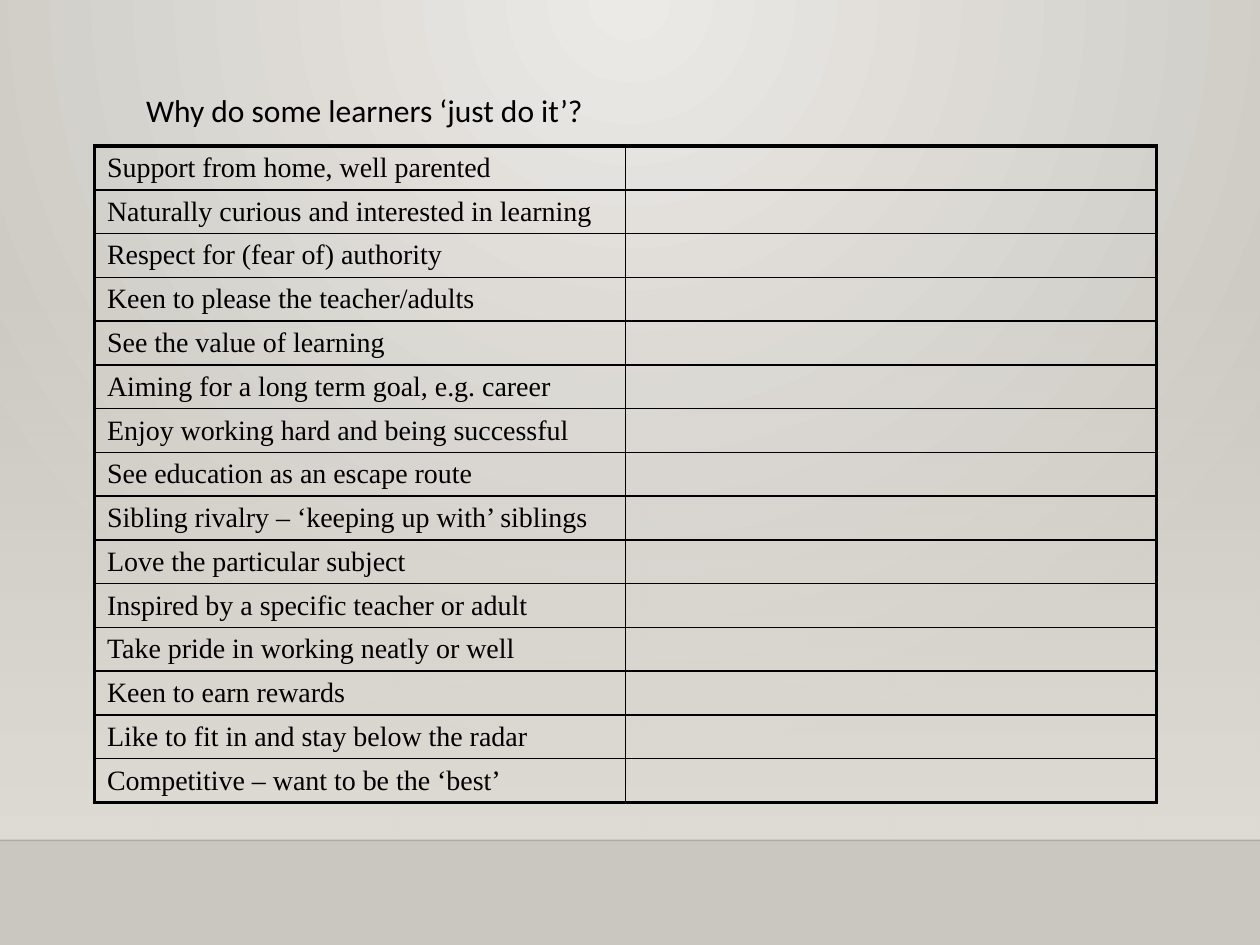
"""Builds a slide with a two-column table of reasons why learners 'just do it'."""
import pptx
import pptx.dml.color
import pptx.enum.shapes
import pptx.enum.text
import pptx.oxml.ns
import pptx.util
from lxml import etree

RGB = pptx.dml.color.RGBColor
BLACK = RGB(0x00, 0x00, 0x00)
INK = RGB(0x00, 0x00, 0x01)
PALE = RGB(0xEC, 0xEA, 0xE7)
GREY = RGB(0xCA, 0xC7, 0xC1)
SAND = RGB(0xDF, 0xDB, 0xD5)
THICK, THIN = 2.25, 1
REASONS = [
    "Support from home, well parented",
    "Naturally curious and interested in learning",
    "Respect for (fear of) authority",
    "Keen to please the teacher/adults",
    "See the value of learning",
    "Aiming for a long term goal, e.g. career",
    "Enjoy working hard and being successful",
    "See education as an escape route",
    "Sibling rivalry – ‘keeping up with’ siblings",
    "Love the particular subject",
    "Inspired by a specific teacher or adult",
    "Take pride in working neatly or well",
    "Keen to earn rewards",
    "Like to fit in and stay below the radar",
    "Competitive – want to be the ‘best’",
]


def write(frame, text, font="Times New Roman", size=16, color=BLACK):
    para = frame.paragraphs[0]
    para.alignment = pptx.enum.text.PP_ALIGN.LEFT
    run = para.add_run()
    run.text = text
    run.font.name = font
    run.font.size = pptx.util.Pt(size)
    run.font.color.rgb = color


def node(parent, tag, **attrs):
    child = etree.SubElement(parent, pptx.oxml.ns.qn(tag))
    for key, value in attrs.items():
        child.set(key, str(value))
    return child


inch = pptx.util.Inches
deck = pptx.Presentation()
deck.slide_width, deck.slide_height = inch(10), inch(7.5)
slide = deck.slides.add_slide(deck.slide_layouts[5])
shapes = slide.shapes

back = slide.background.fill
back.gradient()
for stop, color in zip(back.gradient_stops, (PALE, GREY)):
    stop.color.rgb = color
lin = next(slide.background._cSld.iter(pptx.oxml.ns.qn("a:lin")))
grad = lin.getparent()
grad.remove(lin)
ring = node(grad, "a:path", path="circle")
node(ring, "a:fillToRect", l=43000, t=0, r=43000, b=100000)

floor = 6.67
wall = shapes.add_shape(pptx.enum.shapes.MSO_SHAPE.RECTANGLE,
                        0, inch(2.2), inch(10), inch(floor - 2.2))
wall.shadow.inherit = False
wall.line.fill.background()
wall.fill.gradient()
wall.fill.gradient_angle = 270
for stop in wall.fill.gradient_stops:
    stop.color.rgb = SAND
first = next(wall._element.iter(pptx.oxml.ns.qn("a:srgbClr")))
node(first, "a:alpha", val=0)

edge = shapes.add_connector(pptx.enum.shapes.MSO_CONNECTOR.STRAIGHT,
                            0, inch(floor), inch(10), inch(floor))
edge.line.color.rgb = INK
edge.line.width = pptx.util.Pt(1)
node(next(edge._element.iter(pptx.oxml.ns.qn("a:srgbClr"))), "a:alpha", val=20000)
node(edge._element.spPr, "a:effectLst")

title = shapes.title
title.left, title.top, title.width, title.height = map(inch, (1.06, 0.67, 4.09, 0.4))
title.text_frame.word_wrap = False
title.text_frame.vertical_anchor = pptx.enum.text.MSO_ANCHOR.MIDDLE
write(title.text_frame, "Why do some learners ‘just do it’?", font="Calibri", size=18)

last = len(REASONS) - 1
table = shapes.add_table(len(REASONS), 2, inch(0.75), inch(1.16),
                         inch(8.43), inch(5.21)).table
table.first_row = table.horz_banding = False
for row, reason in enumerate(REASONS):
    for col, text in enumerate((reason, "")):
        cell = table.cell(row, col)
        cell.margin_top = cell.margin_bottom = 0
        cell.vertical_anchor = pptx.enum.text.MSO_ANCHOR.MIDDLE
        if text:
            write(cell.text_frame, text)
        outer = {"L": col == 0, "R": col == 1, "T": row == 0, "B": row == last}
        for side, thick in outer.items():
            width = pptx.util.Pt(THICK if thick else THIN)
            line = node(cell._tc.get_or_add_tcPr(), f"a:ln{side}", w=int(width))
            node(node(line, "a:solidFill"), "a:srgbClr", val=BLACK)
        cell.fill.background()

deck.save("out.pptx")
